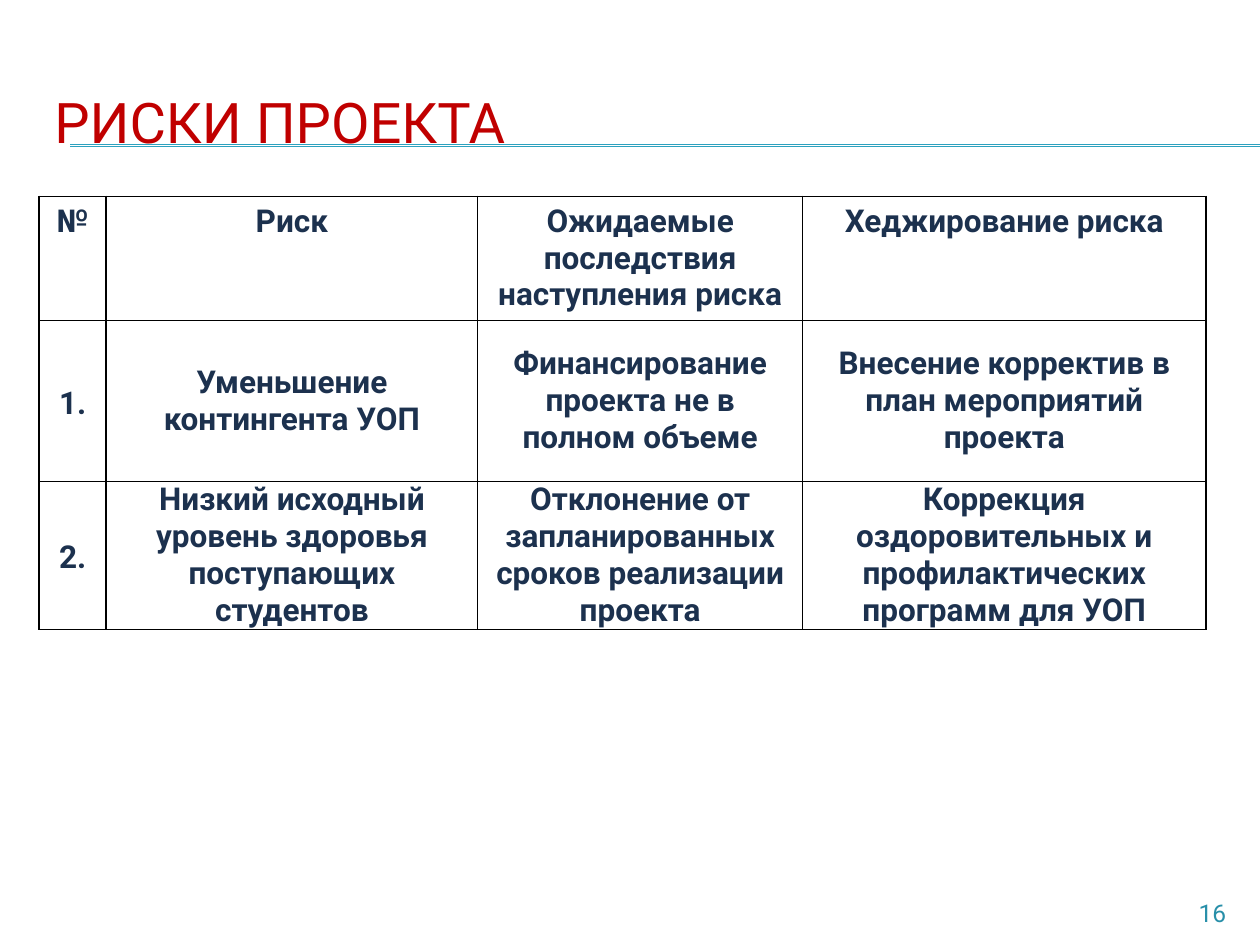
"""Build the project risks slide."""
import dataclasses

import lxml.etree
import pptx
import pptx.dml.color
import pptx.enum.shapes
import pptx.enum.text
import pptx.oxml.ns
import pptx.util

Cm = pptx.util.Cm
Pt = pptx.util.Pt
ALIGN = pptx.enum.text.PP_ALIGN
ANCHOR = pptx.enum.text.MSO_ANCHOR
qn = pptx.oxml.ns.qn


@dataclasses.dataclass(frozen=True)
class Theme:
    font: str = "Roboto"
    title: str = "C00000"
    body: str = "1C314E"
    rule: str = "2DA2BF"
    number: str = "288FA9"
    border: str = "000000"
    title_size: int = 32
    body_size: int = 18
    number_size: int = 14


def rgb(value):
    return pptx.dml.color.RGBColor.from_string(value)


def write(tf, text, *, font, size, color, bold=False, align=ALIGN.LEFT, spacing=None):
    tf.word_wrap = True
    p = tf.paragraphs[0]
    p.alignment = align
    p.line_spacing = spacing
    r = p.add_run()
    r.text = text
    r.font.name = font
    r.font.size = Pt(size)
    r.font.bold = bold
    r.font.color.rgb = rgb(color)


class Deck:
    def __init__(self, prs, theme):
        self.theme = theme
        self.s = prs.slides.add_slide(prs.slide_layouts[5])

    def rule(self, x1, x2, y):
        kind = pptx.enum.shapes.MSO_CONNECTOR.STRAIGHT
        c = self.s.shapes.add_connector(kind, Cm(x1), Cm(y), Cm(x2), Cm(y))
        c.line.color.rgb = rgb(self.theme.rule)
        c.line.width = Pt(0.75)
        lxml.etree.SubElement(c._element.spPr, qn("a:effectLst"))

    def title(self, text, x, y, w, h):
        sp = self.s.shapes.title
        sp.left, sp.top, sp.width, sp.height = Cm(x), Cm(y), Cm(w), Cm(h)
        tf = sp.text_frame
        tf.auto_size = pptx.enum.text.MSO_AUTO_SIZE.NONE
        tf.vertical_anchor = ANCHOR.MIDDLE
        t = self.theme
        write(tf, text, font=t.font, size=t.title_size, color=t.title)

    def number(self, text, x, y, w, h):
        sp = self.s.shapes.add_textbox(Cm(x), Cm(y), Cm(w), Cm(h))
        t = self.theme
        write(sp.text_frame, text, font=t.font, size=t.number_size,
              color=t.number, align=ALIGN.RIGHT)

    def border(self, cell):
        tc_pr = cell._tc.get_or_add_tcPr()
        for i, side in enumerate(("lnL", "lnR", "lnT", "lnB")):
            ln = lxml.etree.Element(qn(f"a:{side}"), w=str(Pt(1)))
            fill = lxml.etree.SubElement(ln, qn("a:solidFill"))
            lxml.etree.SubElement(fill, qn("a:srgbClr"), val=self.theme.border)
            tc_pr.insert(i, ln)

    def cell(self, cell, text, header, spacing):
        cell.fill.background()
        self.border(cell)
        cell.vertical_anchor = ANCHOR.TOP if header else ANCHOR.MIDDLE
        cell.margin_left = cell.margin_right = Cm(0.25 if header else 0.19)
        cell.margin_top = cell.margin_bottom = Cm(0.13 if header else 0)
        t = self.theme
        write(cell.text_frame, text, font=t.font, size=t.body_size, color=t.body,
              bold=True, align=ALIGN.CENTER, spacing=spacing)

    def table(self, rows, x, y, widths, heights):
        frame = self.s.shapes.add_table(len(heights), len(widths), Cm(x), Cm(y),
                                        Cm(sum(widths)), Cm(sum(heights)))
        tbl = frame.table
        tbl.horz_banding = False
        for column, width in zip(tbl.columns, widths):
            column.width = Cm(width)
        for i, (row, height) in enumerate(zip(rows, heights)):
            tbl.rows[i].height = Cm(height)
            for j, text in enumerate(row):
                spacing = 1.15 if i > 0 and j == 0 else None
                self.cell(tbl.cell(i, j), text, i == 0, spacing)


RISKS = [
    ("№", "Риск", "Ожидаемые последствия наступления риска", "Хеджирование риска"),
    ("1.", "Уменьшение контингента УОП", "Финансирование проекта не в полном объеме",
     "Внесение корректив в план мероприятий проекта"),
    ("2.", "Низкий исходный уровень здоровья поступающих студентов",
     "Отклонение от запланированных сроков реализации проекта",
     "Коррекция оздоровительных и профилактических программ для УОП"),
]


def main():
    prs = pptx.Presentation()
    prs.slide_width, prs.slide_height = Cm(25.4), Cm(19.05)
    deck = Deck(prs, Theme())
    for y in (2.92, 2.95):
        deck.rule(1.42, 25.4, y)
    deck.title("РИСКИ ПРОЕКТА", 0.84, 1.27, 24.13, 2.34)
    deck.table(RISKS, 0.79, 3.96, (1.35, 7.49, 6.55, 8.13), (2.48, 3.25, 2.98))
    deck.number("16", 1.3, 17.98, 23.67, 0.69)
    prs.save("out.pptx")


if __name__ == "__main__":
    main()
